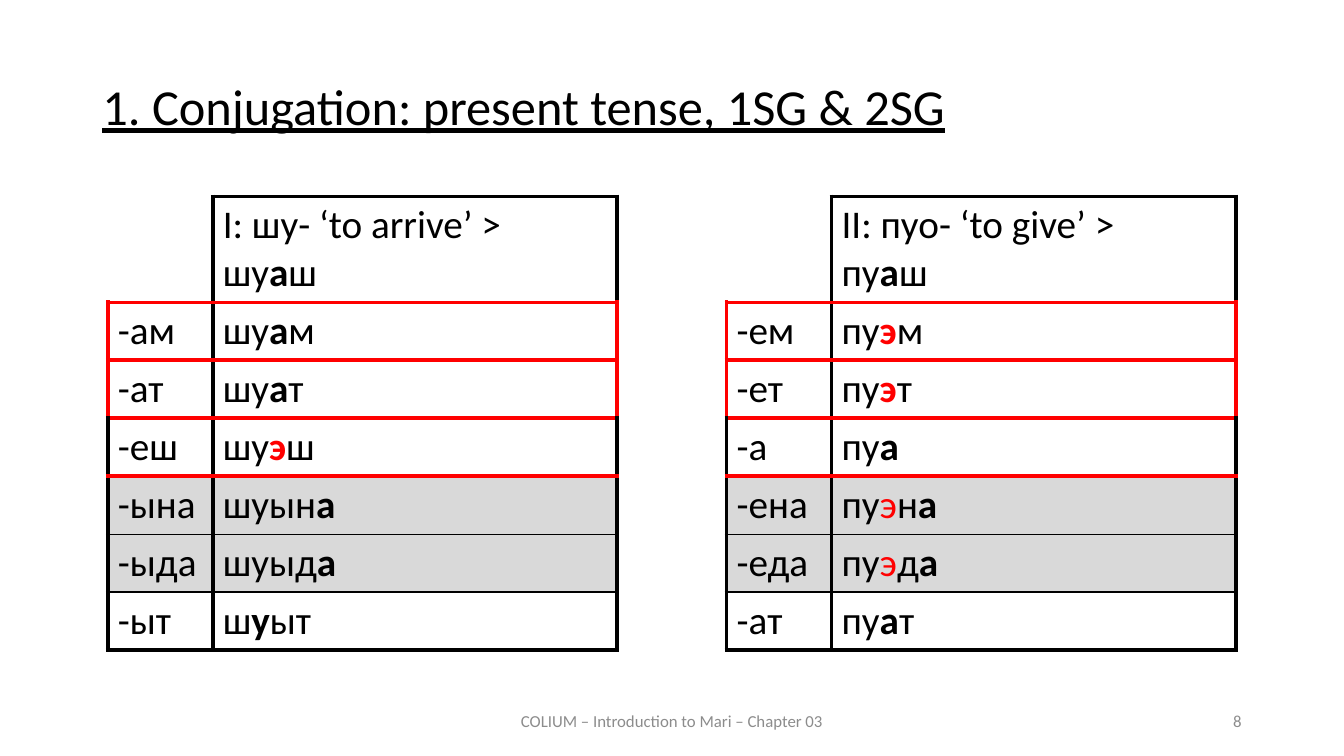
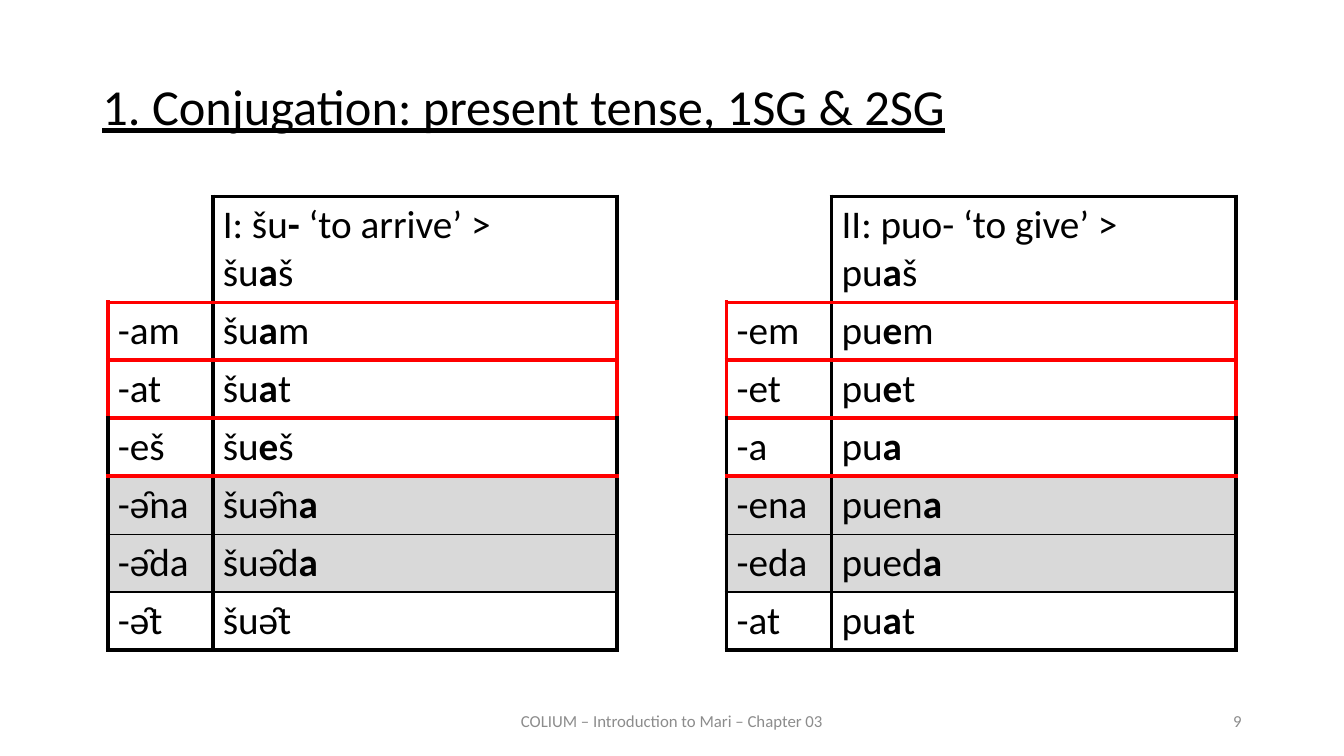
import dataclasses
import itertools

import lxml.etree
import pptx
import pptx.dml.color
import pptx.enum.text
import pptx.oxml.ns
import pptx.util

Pt = pptx.util.Pt
Align = pptx.enum.text.PP_ALIGN
Anchor = pptx.enum.text.MSO_ANCHOR


@dataclasses.dataclass(frozen=True)
class Theme:
    font: str = "Calibri"
    ink: str = "000000"
    accent: str = "FF0000"
    muted: str = "8C8C8C"
    shade: str = "D9D9D9"
    title_size: int = 36
    table_size: int = 28
    footer_size: int = 12
    thick: int = 3
    thin: int = 1


THEME = Theme()
ACCENTED_LETTER = "э"
TITLE = "1. Conjugation: present tense, 1SG & 2SG"
FOOTER = "COLIUM – Introduction to Mari – Chapter 03"

TABLE_LEFTS = (77, 519)
TABLE_TOP = 140.4
COLUMN_WIDTHS = (75, 289)
HEADING_HEIGHT, ROW_HEIGHT = 75.6, 41.4
TAUGHT_ROWS = (1, 2)
SHADED_ROWS = (4, 5)
RED_RULES = (1, 2, 3, 4)

# Slide number, then the two paradigms; asterisks enclose bold letters.
SLIDES = (
    (8, (
        ("I: шу- ‘to arrive’ >\nшу*а*ш",
         (("-ам", "шу*а*м"), ("-ат", "шу*а*т"), ("-еш", "шу*э*ш"),
          ("-ына", "шуын*а*"), ("-ыда", "шуыд*а*"), ("-ыт", "ш*у*ыт"))),
        ("II: пуо- ‘to give’ >\nпу*а*ш",
         (("-ем", "пу*э*м"), ("-ет", "пу*э*т"), ("-а", "пу*а*"),
          ("-ена", "пуэн*а*"), ("-еда", "пуэд*а*"), ("-ат", "пу*а*т"))),
    )),
    (9, (
        ("I: šu*-* ‘to arrive’ >\nšu*a*š",
         (("-am", "šu*a*m"), ("-at", "šu*a*t"), ("-eš", "šu*e*š"),
          ("-ə̑na", "šuə̑n*a*"), ("-ə̑da", "šuə̑d*a*"), ("-ə̑t", "šuə̑t"))),
        ("II: puo- ‘to give’ >\npu*a*š",
         (("-em", "pu*e*m"), ("-et", "pu*e*t"), ("-a", "pu*a*"),
          ("-ena", "puen*a*"), ("-eda", "pued*a*"), ("-at", "pu*a*t"))),
    )),
)


def rgb(color):
    return pptx.dml.color.RGBColor.from_string(color)


def write(frame, text, *, size, color=THEME.ink, align=Align.LEFT,
          underline=False, line_spacing=1.0):
    """Fill a frame: newlines part paragraphs, asterisks enclose bold text."""
    for index, line in enumerate(text.split("\n")):
        paragraph = frame.add_paragraph() if index else frame.paragraphs[0]
        paragraph.alignment = align
        paragraph.line_spacing = line_spacing
        for position, piece in enumerate(line.split("*")):
            groups = itertools.groupby(piece, lambda letter: letter == ACCENTED_LETTER)
            for accented, letters in groups:
                run = paragraph.add_run()
                run.text = "".join(letters)
                run.font.name = THEME.font
                run.font.size = Pt(size)
                run.font.bold = position % 2 == 1
                run.font.underline = underline
                run.font.color.rgb = rgb(THEME.accent if accented else color)


def add_title(slide):
    title = slide.shapes.title
    title.left, title.top, title.width, title.height = Pt(66), Pt(54.7), Pt(828), Pt(48)
    frame = title.text_frame
    frame.auto_size = pptx.enum.text.MSO_AUTO_SIZE.NONE
    frame.vertical_anchor = Anchor.TOP
    write(frame, TITLE, size=THEME.title_size, underline=True, line_spacing=0.9)


def add_footer_text(slide, text, left, width, align):
    box = slide.shapes.add_textbox(Pt(left), Pt(500.5), Pt(width), Pt(28.8))
    frame = box.text_frame
    frame.word_wrap = True
    frame.vertical_anchor = Anchor.MIDDLE
    write(frame, text, size=THEME.footer_size, color=THEME.muted, align=align)


def add_border(cell, side, border):
    """Add one edge to a cell; border is (colour, width), or None for no line."""
    properties = cell._tc.get_or_add_tcPr()
    qn = pptx.oxml.ns.qn
    edge = lxml.etree.SubElement(properties, qn("a:ln" + side))
    if border is None:
        lxml.etree.SubElement(edge, qn("a:noFill"))
        return
    color, width = border
    edge.set("w", str(int(Pt(width))))
    fill = lxml.etree.SubElement(edge, qn("a:solidFill"))
    lxml.etree.SubElement(fill, qn("a:srgbClr")).set("val", color)


def horizontal_border(rule, column, row_count):
    """Border on the rule above row number `rule`."""
    if rule in RED_RULES:
        return THEME.accent, THEME.thick
    if rule == 0:
        return (THEME.ink, THEME.thick) if column else None
    return THEME.ink, THEME.thick if rule == row_count else THEME.thin


def vertical_border(rule, row):
    """Border on the rule left of column number `rule`."""
    if rule == 0 and row == 0:
        return None
    outer = rule != 1
    return THEME.accent if outer and row in TAUGHT_ROWS else THEME.ink, THEME.thick


def add_paradigm(slide, left, heading, forms):
    rows = (("", heading),) + forms
    heights = [HEADING_HEIGHT] + [ROW_HEIGHT] * len(forms)
    table = slide.shapes.add_table(
        len(rows), len(COLUMN_WIDTHS), Pt(left), Pt(TABLE_TOP),
        Pt(sum(COLUMN_WIDTHS)), Pt(sum(heights))).table
    table.first_row = table.horz_banding = False
    for column, width in zip(table.columns, COLUMN_WIDTHS):
        column.width = Pt(width)
    for row, (texts, height) in enumerate(zip(rows, heights)):
        table.rows[row].height = Pt(height)
        for column, text in enumerate(texts):
            cell = table.cell(row, column)
            add_border(cell, "L", vertical_border(column, row))
            add_border(cell, "R", vertical_border(column + 1, row))
            add_border(cell, "T", horizontal_border(row, column, len(rows)))
            add_border(cell, "B", horizontal_border(row + 1, column, len(rows)))
            if row in SHADED_ROWS:
                cell.fill.solid()
                cell.fill.fore_color.rgb = rgb(THEME.shade)
            else:
                cell.fill.background()
            write(cell.text_frame, text, size=THEME.table_size)


def main():
    deck = pptx.Presentation()
    deck.slide_width, deck.slide_height = Pt(960), Pt(540)
    title_only = deck.slide_layouts[5]
    for number, paradigms in SLIDES:
        slide = deck.slides.add_slide(title_only)
        add_title(slide)
        add_footer_text(slide, FOOTER, 318, 324, Align.CENTER)
        add_footer_text(slide, str(number), 678, 216, Align.RIGHT)
        for left, (heading, forms) in zip(TABLE_LEFTS, paradigms):
            add_paradigm(slide, left, heading, forms)
    deck.save("out.pptx")


if __name__ == "__main__":
    main()
